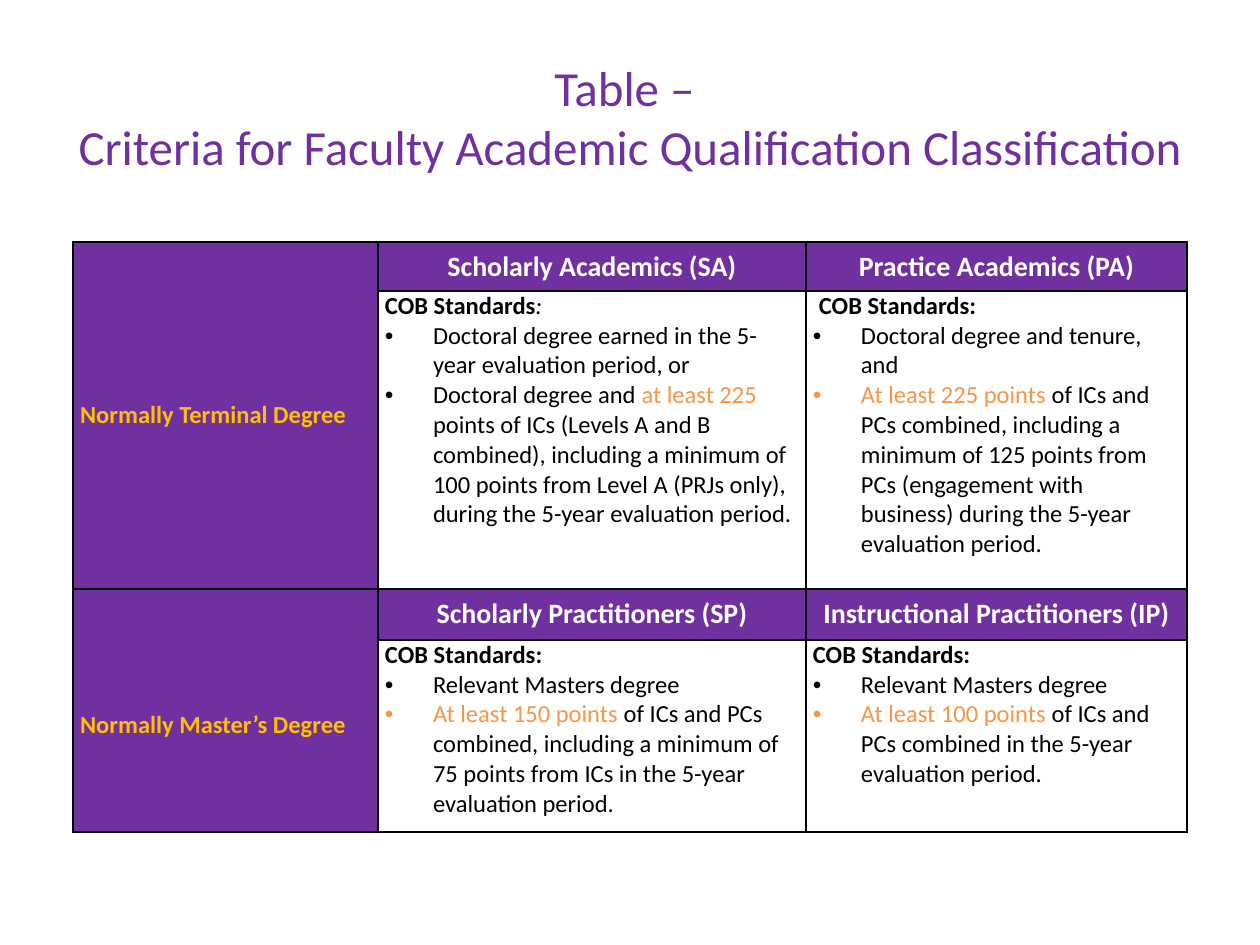
"""Build a slide with a table of criteria for faculty academic qualification."""
from dataclasses import dataclass

from lxml.etree import SubElement
from pptx import Presentation
from pptx.dml.color import RGBColor
from pptx.enum.text import MSO_ANCHOR, PP_ALIGN
from pptx.oxml.ns import qn
from pptx.util import Pt

TITLE = "Table – \vCriteria for Faculty Academic Qualification Classification"
COLUMNS = (305, 428, 381)
ROWS = (49, 298, 51, 192)
DEGREES = [
    {
        "label": "Normally Terminal Degree",
        "inset": 0,
        "classes": [
            {
                "name": "Scholarly Academics (SA)",
                "heading": [("COB Standards", "bold"), (":", "italic")],
                "indent": 0,
                "criteria": [
                    [("Doctoral degree earned in the 5-year evaluation period, or", "plain")],
                    [("Doctoral degree and ", "plain"), ("at least 225 ", "accent"),
                     ("points of ICs (Levels A and B combined), including a minimum of 100 points "
                      "from Level A (PRJs only), during the 5-year evaluation period.", "plain")],
                ],
            },
            {
                "name": "Practice Academics (PA)",
                "heading": [("COB Standards:", "bold")],
                "indent": 6,
                "criteria": [
                    [("Doctoral degree and tenure, and", "plain")],
                    [("At least 225 points ", "accent"),
                     ("of ICs and PCs combined, including a minimum of 125 points from PCs "
                      "(engagement with business) during the 5-year evaluation period.", "plain")],
                ],
            },
        ],
    },
    {
        "label": "Normally Master’s Degree",
        "inset": 30,
        "classes": [
            {
                "name": "Scholarly Practitioners (SP)",
                "heading": [("COB Standards:", "bold")],
                "indent": 0,
                "criteria": [
                    [("Relevant Masters degree", "plain")],
                    [("At least 150 points ", "accent"),
                     ("of ICs and PCs combined, including a minimum of 75 points from ICs "
                      "in the 5-year evaluation period.", "plain")],
                ],
            },
            {
                "name": "Instructional Practitioners (IP)",
                "heading": [("COB Standards:", "bold")],
                "indent": 0,
                "criteria": [
                    [("Relevant Masters degree", "plain")],
                    [("At least 100 points ", "accent"),
                     ("of ICs and PCs combined in the 5-year evaluation period.", "plain")],
                ],
            },
        ],
    },
]


@dataclass(frozen=True)
class Theme:
    font: str = "Calibri"
    purple: str = "7030A0"
    gold: str = "FFC000"
    orange: str = "F79646"
    black: str = "000000"
    white: str = "FFFFFF"
    title_size: int = 28
    header_size: int = 16
    body_size: int = 14
    thin: float = 1
    thick: float = 1.5


THEME = Theme()


def px(length):
    return round(length * 914400 / 126)


def set_font(font, size, color, bold=False):
    font.name = THEME.font
    font.size = Pt(size)
    font.bold = bold
    font.color.rgb = RGBColor.from_string(color)


def format_cell(cell, fill, anchor, top_width, bottom_width, inset=0):
    cell.margin_left = cell.margin_right = px(7)
    cell.margin_top, cell.margin_bottom = px(inset), 0
    cell.vertical_anchor = anchor
    properties = cell._tc.get_or_add_tcPr()
    widths = {"L": THEME.thin, "R": THEME.thin, "T": top_width, "B": bottom_width}
    for side, width in widths.items():
        line = SubElement(properties, qn(f"a:ln{side}"), w=str(Pt(width)))
        SubElement(SubElement(line, qn("a:solidFill")), qn("a:srgbClr"), val=THEME.black)
    cell.fill.solid()
    cell.fill.fore_color.rgb = RGBColor.from_string(fill)


def write_label(cell, text, size, color, align):
    paragraph = cell.text_frame.paragraphs[0]
    paragraph.text = text
    paragraph.alignment = align
    set_font(paragraph.font, size, color, bold=True)


def write_runs(paragraph, runs, indent, hanging=0):
    properties = paragraph._p.get_or_add_pPr()
    properties.set("marL", str(px(indent)))
    properties.set("indent", str(-px(hanging)))
    if hanging:
        SubElement(properties, qn("a:buFont"), typeface="Arial")
        SubElement(properties, qn("a:buChar"), char="•")
    set_font(paragraph.font, THEME.body_size, THEME.black)
    for text, style in runs:
        run = paragraph.add_run()
        run.text = text
        if style == "bold":
            run.font.bold = True
        elif style == "italic":
            run.font.italic = True
        elif style == "accent":
            run.font.color.rgb = RGBColor.from_string(THEME.orange)


def add_title(slide):
    title = slide.shapes.title
    title.left, title.top, title.width, title.height = map(px, (63, 38, 1134, 157))
    frame = title.text_frame
    frame.text = TITLE
    frame.vertical_anchor = MSO_ANCHOR.MIDDLE
    paragraph = frame.paragraphs[0]
    paragraph.alignment = PP_ALIGN.CENTER
    set_font(paragraph.font, THEME.title_size, THEME.purple)


def add_criteria_table(slide):
    table = slide.shapes.add_table(
        len(ROWS), len(COLUMNS), px(73), px(242), px(sum(COLUMNS)), px(sum(ROWS))
    ).table
    table.first_row = table.horz_banding = False
    for column, width in zip(table.columns, COLUMNS):
        column.width = px(width)
    for row, height in zip(table.rows, ROWS):
        row.height = px(height)

    for index, degree in enumerate(DEGREES):
        top = 2 * index
        top_width = THEME.thin if index else THEME.thick
        label = table.cell(top, 0)
        label.merge(table.cell(top + 1, 0))
        for cell in (label, table.cell(top + 1, 0)):
            format_cell(cell, THEME.purple, MSO_ANCHOR.MIDDLE, top_width, THEME.thin, degree["inset"])
        write_label(label, degree["label"], THEME.body_size, THEME.gold, PP_ALIGN.LEFT)

        for column, group in enumerate(degree["classes"], start=1):
            header, body = table.cell(top, column), table.cell(top + 1, column)
            format_cell(header, THEME.purple, MSO_ANCHOR.MIDDLE, top_width, THEME.thick)
            write_label(header, group["name"], THEME.header_size, THEME.white, PP_ALIGN.CENTER)
            format_cell(body, THEME.white, MSO_ANCHOR.TOP, THEME.thick, THEME.thin)
            frame = body.text_frame
            write_runs(frame.paragraphs[0], group["heading"], group["indent"])
            for runs in group["criteria"]:
                write_runs(frame.add_paragraph(), runs, indent=48, hanging=48)


def main():
    presentation = Presentation()
    presentation.slide_width, presentation.slide_height = px(1260), px(945)
    slide = presentation.slides.add_slide(presentation.slide_layouts[5])
    add_title(slide)
    add_criteria_table(slide)
    presentation.save("out.pptx")


if __name__ == "__main__":
    main()
